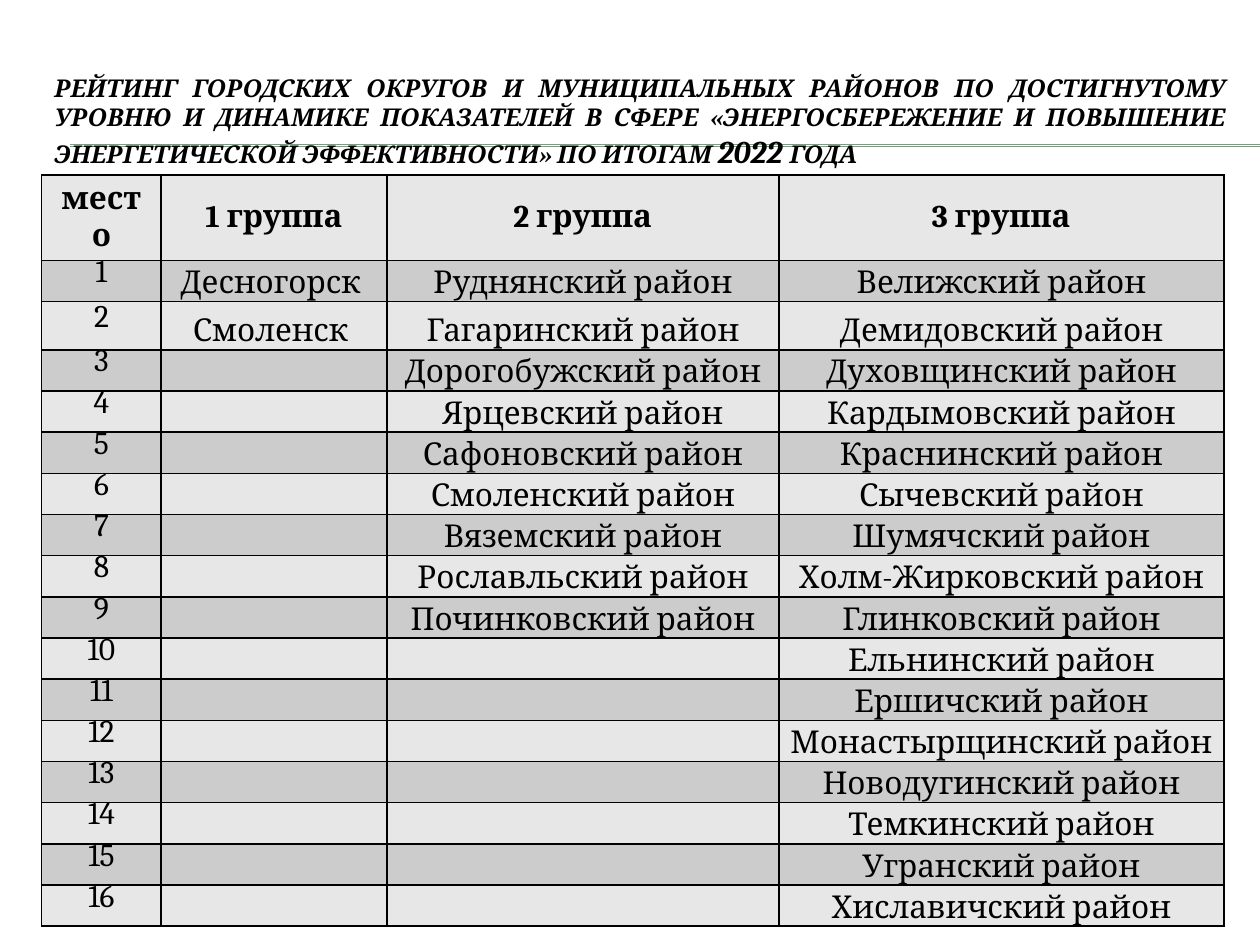
from dataclasses import dataclass
from itertools import zip_longest

from lxml import etree
from pptx import Presentation
from pptx import util as u
from pptx.dml.color import RGBColor
from pptx.enum import shapes, text
from pptx.oxml.ns import qn

COLORS = {"ink": "000000", "rule": "72A376", "light": "E7E7E7", "dark": "CCCCCC"}
FONT = "Cambria"


@dataclass
class Column:
    heading: str
    width: float
    entries: list[str]


def districts(names: str) -> list[str]:
    return [f"{name} район" for name in names.split()]


COLUMNS = [
    Column("место", 2.41, [str(place) for place in range(1, 17)]),
    Column("1 группа", 4.55, ["Десногорск ", "Смоленск "]),
    Column("2 группа", 7.9, districts(
        "Руднянский Гагаринский Дорогобужский Ярцевский Сафоновский "
        "Смоленский Вяземский Рославльский Починковский")),
    Column("3 группа", 8.97, districts(
        "Велижский Демидовский Духовщинский Кардымовский Краснинский Сычевский "
        "Шумячский Холм-Жирковский Глинковский Ельнинский Ершичский "
        "Монастырщинский Новодугинский Темкинский Угранский Хиславичский")),
]
HEADER_HEIGHT, ROW_HEIGHT, SECOND_ROW_HEIGHT = 1.07, 0.83, 0.97


def color(name: str) -> RGBColor:
    return RGBColor.from_string(COLORS[name])


def add_span(para, words: str, *, size=18, bold=False, italic=False) -> None:
    span = para.add_run()
    span.text = words
    span.font.name = FONT
    span.font.size = u.Pt(size)
    span.font.bold = bold
    span.font.italic = italic
    span.font.color.rgb = color("ink")


def add_rule(page, top: float) -> None:
    """Draw a thin rule behind everything else on the page."""
    rule = page.shapes.add_connector(
        shapes.MSO_CONNECTOR.STRAIGHT, u.Cm(1.42), u.Cm(top), u.Cm(25.4), u.Cm(top))
    rule.line.color.rgb = color("rule")
    rule.line.width = u.Pt(0.75)
    etree.SubElement(rule._element.spPr, qn("a:effectLst"))
    page.shapes._spTree.insert(2, rule._element)


def add_borders(cell) -> None:
    properties = cell._tc.get_or_add_tcPr()
    for side in ("lnL", "lnR", "lnT", "lnB"):
        border = etree.SubElement(properties, qn(f"a:{side}"), w=str(u.Pt(1)))
        fill = etree.SubElement(border, qn("a:solidFill"))
        etree.SubElement(fill, qn("a:srgbClr"), val=COLORS["ink"])


def format_cell(cell, words: str, row: int, column: int) -> None:
    add_borders(cell)
    cell.fill.solid()
    cell.fill.fore_color.rgb = color("dark" if row % 2 else "light")
    cell.vertical_anchor = text.MSO_ANCHOR.MIDDLE
    para = cell.text_frame.paragraphs[0]
    para.alignment = text.PP_ALIGN.CENTER
    if row and column:
        cell.vertical_anchor = text.MSO_ANCHOR.BOTTOM
        cell.margin_left = cell.margin_right = cell.margin_top = u.Cm(0.03)
        cell.margin_bottom = 0
    elif row:
        para.line_spacing = u.Pt(11)
    if words:
        add_span(para, words, bold=row == 0)


def add_title(page) -> None:
    box = page.shapes.title
    box.left, box.top, box.width, box.height = map(u.Cm, (0.84, 1.27, 24.13, 2.34))
    frame = box.text_frame
    frame.word_wrap = True
    frame.auto_size = text.MSO_AUTO_SIZE.NONE
    frame.vertical_anchor = text.MSO_ANCHOR.MIDDLE
    para = frame.paragraphs[0]
    para.alignment = text.PP_ALIGN.JUSTIFY
    for words, size in (
        ("РЕЙТИНГ ГОРОДСКИХ ОКРУГОВ И МУНИЦИПАЛЬНЫХ РАЙОНОВ ПО ДОСТИГНУТОМУ "
         "УРОВНЮ И ДИНАМИКЕ ПОКАЗАТЕЛЕЙ В СФЕРЕ «ЭНЕРГОСБЕРЕЖЕНИЕ И ПОВЫШЕНИЕ "
         "ЭНЕРГЕТИЧЕСКОЙ ЭФФЕКТИВНОСТИ» ПО ИТОГАМ ", 14),
        ("2022 ", 18),
        ("ГОДА", 14),
    ):
        add_span(para, words, size=size, bold=True, italic=True)


def add_ranking(page) -> None:
    rows = [[column.heading for column in COLUMNS]]
    rows += zip_longest(*(column.entries for column in COLUMNS), fillvalue="")
    heights = [HEADER_HEIGHT] + [ROW_HEIGHT] * (len(rows) - 1)
    heights[2] = SECOND_ROW_HEIGHT
    widths = [column.width for column in COLUMNS]
    table = page.shapes.add_table(
        len(rows), len(COLUMNS), u.Cm(0.84), u.Cm(3.53),
        u.Cm(sum(widths)), u.Cm(sum(heights))).table
    for column, width in zip(table.columns, widths):
        column.width = u.Cm(width)
    for row, (height, entries) in enumerate(zip(heights, rows)):
        table.rows[row].height = u.Cm(height)
        for column, words in enumerate(entries):
            format_cell(table.cell(row, column), words, row, column)


def main() -> None:
    deck = Presentation()
    deck.slide_width, deck.slide_height = u.Cm(25.4), u.Cm(19.05)
    page = deck.slides.add_slide(deck.slide_layouts[5])

    # Heading with the double rule behind it
    add_title(page)
    for top in (2.92, 2.95):
        add_rule(page, top)

    # Ranking by group
    add_ranking(page)
    deck.save("out.pptx")


if __name__ == "__main__":
    main()
